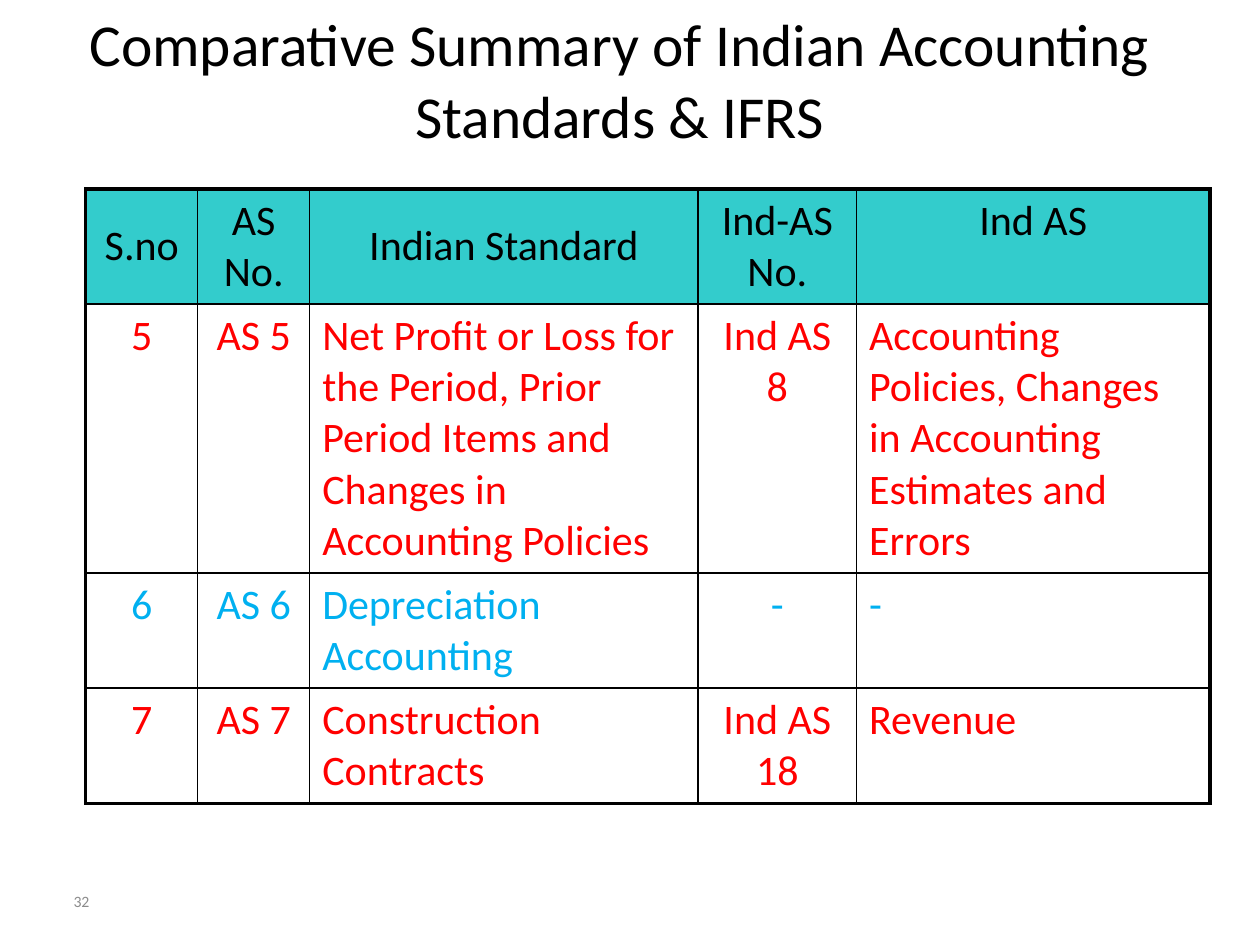
from lxml.etree import SubElement
from pptx import Presentation
from pptx.dml.color import RGBColor
from pptx.enum.text import MSO_ANCHOR as Anchor, PP_ALIGN as Align
from pptx.oxml.ns import qn
from pptx.util import Pt

BLACK = RGBColor(0x00, 0x00, 0x00)
GRAY = RGBColor(0x8C, 0x8C, 0x8C)
TEAL = RGBColor(0x33, 0xCC, 0xCC)
RED = RGBColor(0xFF, 0x00, 0x00)
BLUE = RGBColor(0x00, 0xB0, 0xF0)

FONT = "Calibri"
THIN, THICK = 1, 2.25
COLUMN_WIDTHS = [64, 64, 222, 90.5, 202]
ROW_HEIGHTS = [65.8, 153.7, 65.8, 65.8]
HEADINGS = ["S.no", "AS No.", "Indian Standard", "Ind-AS No.", "Ind AS"]
STANDARDS = [
    (RED, ["5", "AS 5",
           "Net Profit or Loss for the Period, Prior Period Items and "
           "Changes in Accounting Policies",
           "Ind AS 8",
           "Accounting Policies, Changes in Accounting Estimates and Errors"]),
    (BLUE, ["6", "AS 6", "Depreciation Accounting", "-", "-"]),
    (RED, ["7", "AS 7", "Construction Contracts", "Ind AS 18", "Revenue"]),
]
CENTERED_COLUMNS = {0, 1, 3}


def write_text(frame, text, size, color, align):
    para = frame.paragraphs[0]
    para.alignment = align
    span = para.add_run()
    span.text = text
    span.font.name = FONT
    span.font.size = Pt(size)
    span.font.color.rgb = color


def add_text(page, left, top, width, height, text, size, color, align):
    box = page.shapes.add_textbox(Pt(left), Pt(top), Pt(width), Pt(height))
    frame = box.text_frame
    frame.word_wrap = True
    frame.vertical_anchor = Anchor.MIDDLE
    frame.margin_left = frame.margin_right = Pt(6)
    frame.margin_top = frame.margin_bottom = Pt(3)
    write_text(frame, text, size, color, align)


def set_borders(cell, widths):
    properties = cell._tc.get_or_add_tcPr()
    for side, width in widths.items():
        line = SubElement(properties, qn(f"a:ln{side}"), w=str(int(Pt(width))))
        fill = SubElement(line, qn("a:solidFill"))
        SubElement(fill, qn("a:srgbClr"), val=str(BLACK))


def add_standards_table(page, left, top):
    rows = [(BLACK, HEADINGS)] + STANDARDS
    last_row, last_column = len(rows) - 1, len(HEADINGS) - 1
    table = page.shapes.add_table(
        len(rows), len(HEADINGS), Pt(left), Pt(top),
        Pt(sum(COLUMN_WIDTHS)), Pt(sum(ROW_HEIGHTS))).table
    table.first_row = table.horz_banding = False
    for column, width in zip(table.columns, COLUMN_WIDTHS):
        column.width = Pt(width)
    for row, height in zip(table.rows, ROW_HEIGHTS):
        row.height = Pt(height)

    for r, (color, texts) in enumerate(rows):
        for c, text in enumerate(texts):
            cell = table.cell(r, c)
            set_borders(cell, {
                "L": THICK if c == 0 else THIN,
                "R": THICK if c == last_column else THIN,
                "T": THICK if r == 0 else THIN,
                "B": THICK if r == last_row else THIN,
            })
            cell.margin_left = cell.margin_right = Pt(7.2)
            cell.margin_top = cell.margin_bottom = Pt(3.6)
            if r == 0:
                cell.fill.solid()
                cell.fill.fore_color.rgb = TEAL
            else:
                cell.fill.background()
            middle = r == 0 and c < last_column
            cell.vertical_anchor = Anchor.MIDDLE if middle else Anchor.TOP
            centered = r == 0 or c in CENTERED_COLUMNS
            write_text(cell.text_frame, text, 24, color,
                       Align.CENTER if centered else Align.LEFT)


def main():
    deck = Presentation()
    deck.slide_width, deck.slide_height = Pt(720), Pt(540)
    page = deck.slides.add_slide(deck.slide_layouts[6])
    add_text(page, 36, 500.5, 168, 28.8, "32", 9, GRAY, Align.LEFT)
    add_standards_table(page, 49, 108)
    add_text(page, 18, 0, 672, 90,
             "Comparative Summary of Indian Accounting Standards & IFRS",
             34, BLACK, Align.CENTER)
    deck.save("out.pptx")


if __name__ == "__main__":
    main()
